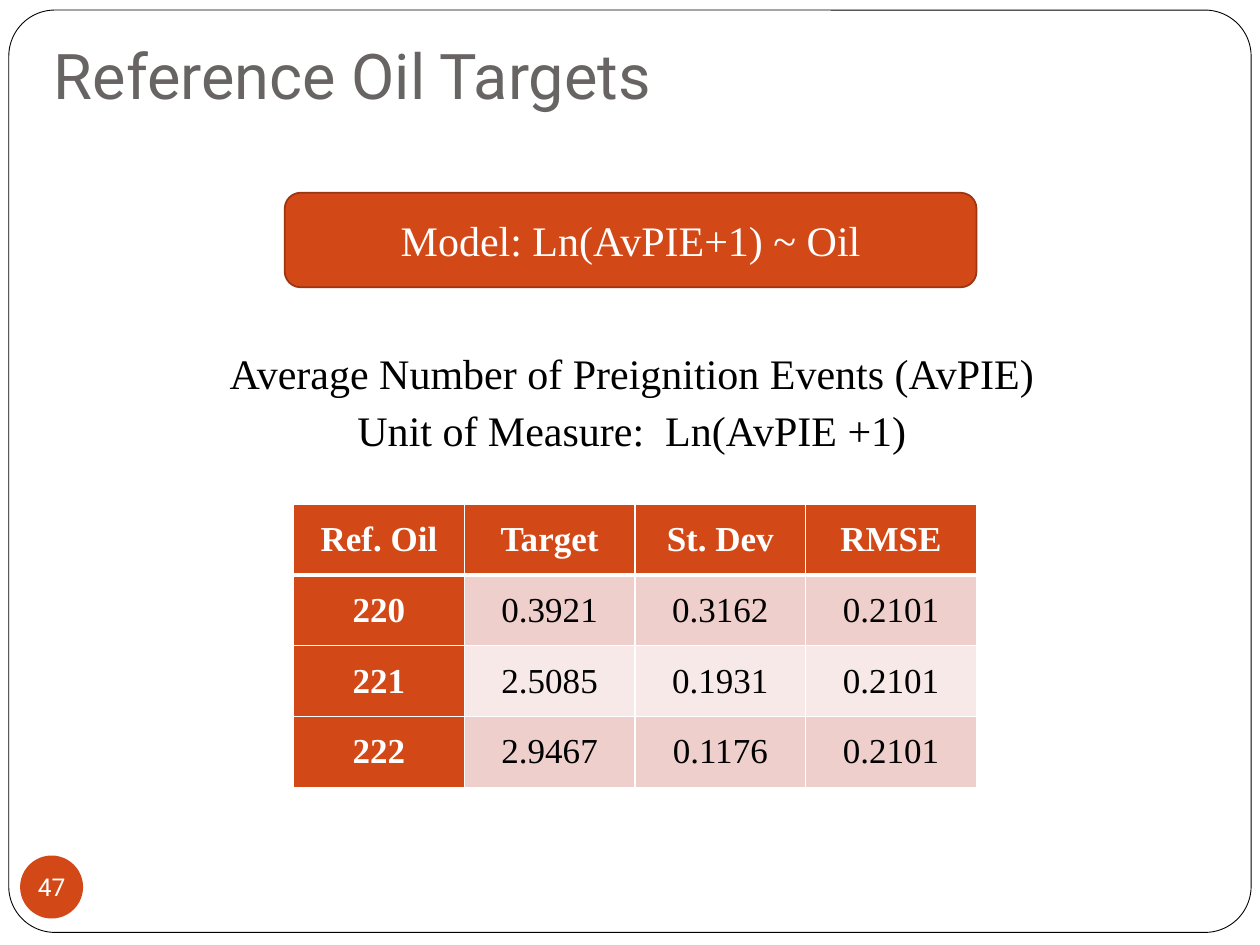
from lxml import etree
from pptx import Presentation
from pptx.dml.color import RGBColor
from pptx.enum import shapes, text
from pptx.oxml import ns
from pptx import util as u

COLORS = {
    "white": "FFFFFF", "black": "000000", "gray": "696464", "orange": "D34817",
    "rust": "9C3511", "rose": "EFCFCC", "blush": "F7E9E8",
}
SERIF, SANS = "Times New Roman", "Roboto"
MID, LEFT = text.PP_ALIGN.CENTER, text.PP_ALIGN.LEFT
ROUND, OVAL = shapes.MSO_SHAPE.ROUNDED_RECTANGLE, shapes.MSO_SHAPE.OVAL


def color(name):
    """Return the named palette color."""
    return RGBColor.from_string(COLORS[name])


class Deck:
    """Holds the style and the current slide."""

    def __init__(self):
        self.prs = Presentation()
        self.prs.slide_width, self.prs.slide_height = u.Inches(10), u.Inches(7.5)
        self.slide = self.prs.slides.add_slide(self.prs.slide_layouts[6])

    def letter(self, frame, lines, size, tint, font=SERIF, align=MID,
               bold=False, before=0, indent=0):
        """Fill a text frame with one run per line."""
        for i, line in enumerate(lines):
            par = frame.add_paragraph() if i else frame.paragraphs[0]
            par.alignment = align
            par.space_before = u.Pt(before)
            if indent:
                par._p.get_or_add_pPr().set("marL", str(u.Inches(indent)))
            run = par.add_run()
            run.text = line
            run.font.name, run.font.size, run.font.bold = font, u.Pt(size), bold
            run.font.color.rgb = color(tint)

    def shape(self, kind, box, fill, line=None, width=1, bend=None):
        """Add a filled preset shape and return it."""
        item = self.slide.shapes.add_shape(kind, *map(u.Inches, box))
        item.shadow.inherit = False
        item.fill.solid()
        item.fill.fore_color.rgb = color(fill)
        if line:
            item.line.color.rgb = color(line)
            item.line.width = u.Pt(width)
        else:
            item.line.fill.background()
        if bend is not None:
            item.adjustments[0] = bend
        item.text_frame.vertical_anchor = text.MSO_ANCHOR.MIDDLE
        return item

    def label(self, box, lines, size, tint, anchor=text.MSO_ANCHOR.TOP, foot=0.05, **look):
        """Add a wrapped text box."""
        frame = self.slide.shapes.add_textbox(*map(u.Inches, box)).text_frame
        frame.word_wrap = True
        frame.vertical_anchor = anchor
        frame.margin_bottom = u.Inches(foot)
        self.letter(frame, lines, size, tint, **look)

    def edge(self, cell, side, width):
        """Draw one white cell border."""
        props = cell._tc.get_or_add_tcPr()
        line = etree.SubElement(props, ns.qn("a:ln" + side), w=str(u.Pt(width)))
        fill = etree.SubElement(line, ns.qn("a:solidFill"))
        etree.SubElement(fill, ns.qn("a:srgbClr"), val=COLORS["white"])

    def table(self, box, rows):
        """Add a banded table with a strong first row and column."""
        grid = self.slide.shapes.add_table(len(rows), len(rows[0]), *map(u.Inches, box)).table
        for r, row in enumerate(rows):
            for c, value in enumerate(row):
                cell = grid.cell(r, c)
                head = r == 0 or c == 0
                for side in "LRTB":
                    thick = (r, side) in ((0, "B"), (1, "T"))
                    self.edge(cell, side, 3 if thick else 1)
                cell.fill.solid()
                band = "rose" if r % 2 else "blush"
                cell.fill.fore_color.rgb = color("orange" if head else band)
                cell.vertical_anchor = text.MSO_ANCHOR.MIDDLE
                cell.margin_left = cell.margin_right = u.Inches(0.07)
                cell.margin_top = cell.margin_bottom = 0
                self.letter(cell.text_frame, [value], 20,
                            "white" if head else "black", bold=head)

    def badge(self, box, value):
        """Add the round page number."""
        frame = self.shape(OVAL, box, "orange").text_frame
        frame.margin_left = frame.margin_right = 0
        frame.margin_top = frame.margin_bottom = 0
        frame.word_wrap = False
        self.letter(frame, [value], 14, "white", font=SANS)


def main():
    """Build the oil targets slide."""
    deck = Deck()
    deck.shape(ROUND, (0.07, 0.08, 9.86, 7.32), "white", "black", 0.5, 0.05)
    deck.label((0.33, 0.32, 8.5, 0.67), ["Reference Oil Targets"], 36, "gray",
               anchor=text.MSO_ANCHOR.BOTTOM, foot=0.1, font=SANS, align=LEFT)
    deck.table((2.33, 4, 5.42, 2.25), [
        ("Ref. Oil", "Target", "St. Dev", "RMSE"),
        ("220", "0.3921", "0.3162", "0.2101"),
        ("221", "2.5085", "0.1931", "0.2101"),
        ("222", "2.9467", "0.1176", "0.2101"),
    ])
    deck.badge((0.16, 6.79, 0.5, 0.5), "47")
    deck.label((0, 2.71, 9.68, 1.17), [
        "Average Number of Preignition Events (AvPIE)",
        "Unit of Measure:  Ln(AvPIE +1)",
    ], 24, "black", before=3.7, indent=0.35)
    model = deck.shape(ROUND, (2.26, 1.53, 5.49, 0.75), "orange", "rust")
    deck.letter(model.text_frame, ["Model: Ln(AvPIE+1) ~ Oil"], 24, "white")
    deck.prs.save("out.pptx")


if __name__ == "__main__":
    main()
